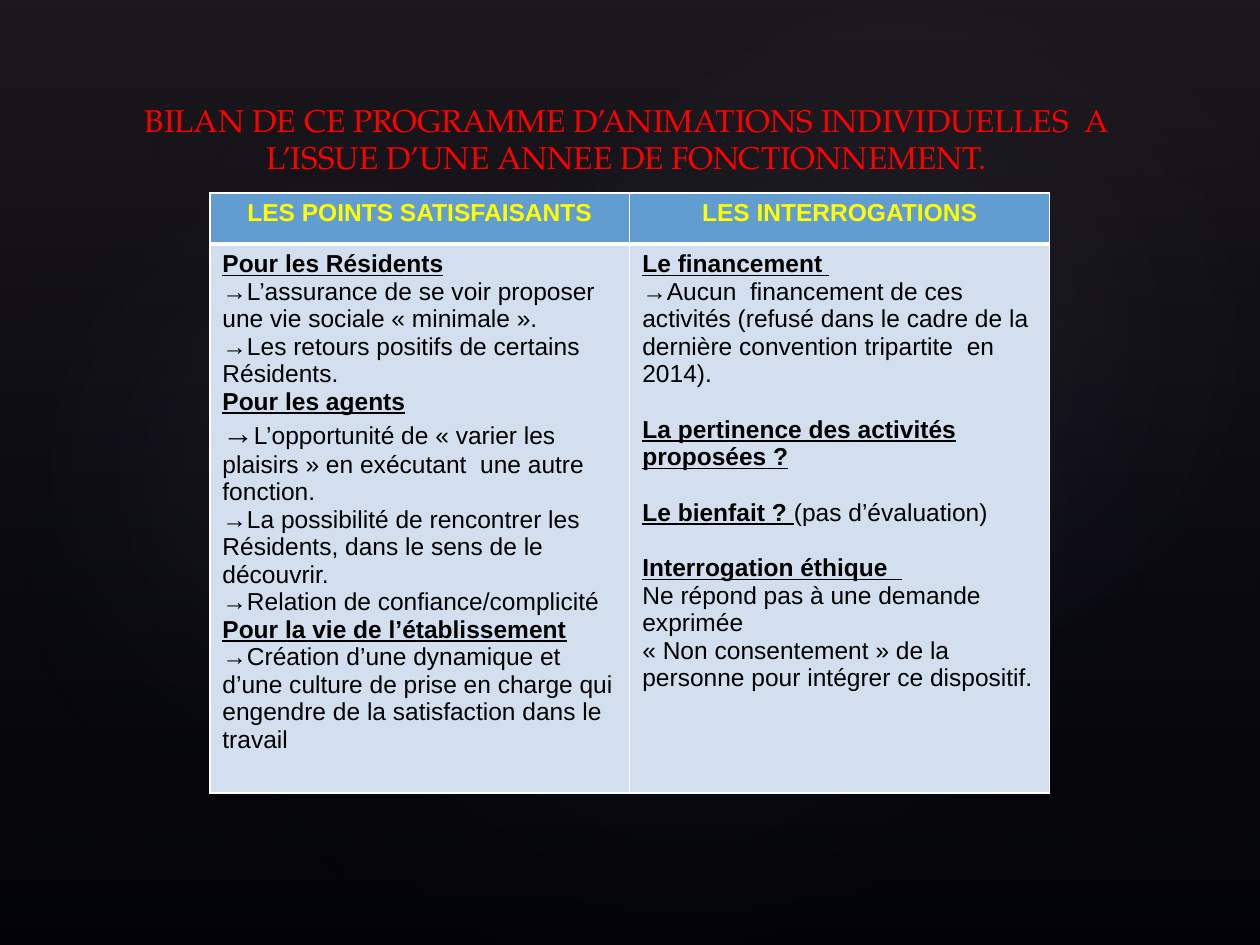
from dataclasses import dataclass

from lxml.etree import SubElement
from pptx import Presentation
from pptx.dml.color import RGBColor
from pptx.enum.shapes import MSO_SHAPE
from pptx.enum.text import MSO_ANCHOR, MSO_AUTO_SIZE, PP_ALIGN
from pptx.oxml import parse_xml
from pptx.oxml.ns import nsdecls, qn
from pptx.util import Cm, Pt


@dataclass(frozen=True)
class Theme:
    background: str = "000000"
    veil_top: str = "504652"
    veil_bottom: str = "242852"
    glow: str = "C4BCC6"
    title: str = "FF0000"
    header_text: str = "FFFF00"
    header_fill: str = "629DD1"
    body_text: str = "000000"
    body_fill: str = "D3DFEE"
    border: str = "FFFFFF"
    title_font: str = "TeX Gyre Pagella"
    table_font: str = "Arial"
    title_size: int = 18
    table_size: int = 14
    line_gap: int = 16


THEME = Theme()
ARROW = "→"
TITLE = ("BILAN DE CE PROGRAMME D’ANIMATIONS INDIVIDUELLES  A "
         "L’ISSUE D’UNE ANNEE DE FONCTIONNEMENT.")
HEADERS = ("LES POINTS SATISFAISANTS", "LES INTERROGATIONS")

# Each paragraph: heading, plain text, and whether a gap comes before it
SATISFACTIONS = [
    ("Pour les Résidents", "", False),
    ("", "→L’assurance de se voir proposer une vie sociale « minimale ».", False),
    ("", "→Les retours positifs de certains Résidents.", False),
    ("Pour les agents", "", False),
    ("", "→L’opportunité de « varier les plaisirs » en exécutant  une autre fonction.", False),
    ("", "→La possibilité de rencontrer les Résidents, dans le sens de le découvrir.", False),
    ("", "→Relation de confiance/complicité", False),
    ("Pour la vie de l’établissement", "", False),
    ("", "→Création d’une dynamique et d’une culture de prise en charge qui "
         "engendre de la satisfaction dans le travail", False),
]
QUESTIONS = [
    ("Le financement ", "", False),
    ("", "→Aucun  financement de ces activités (refusé dans le cadre de la "
         "dernière convention tripartite  en 2014).", False),
    ("La pertinence des activités proposées ?", "", True),
    ("Le bienfait ? ", "(pas d’évaluation)", True),
    ("Interrogation éthique  ", "", True),
    ("", "Ne répond pas à une demande exprimée", False),
    ("", "« Non consentement » de la personne pour intégrer ce dispositif.", False),
]
LARGE_ARROW_BEFORE = "→L’opportunité"

# Left, top, width, height in cm, then rotation and opacity
GLOWS = [
    (3.81, 2.9, 20.12, 15.85, 328.7, 7),
    (-0.76, 3.25, 15.39, 12.45, 294.3, 8),
    (9.09, 0.33, 18.01, 13.21, 328.7, 8),
]


def add_gradient_shape(slide, kind, bounds, stops, direction):
    """Add a borderless shape whose stops are (position, colour, opacity)."""
    shape = slide.shapes.add_shape(kind, *(Cm(length) for length in bounds))
    shape.shadow.inherit = False
    shape.line.fill.background()
    stop_xml = "".join(
        f'<a:gs pos="{position * 1000}"><a:srgbClr val="{colour}">'
        f'<a:alpha val="{opacity * 1000}"/></a:srgbClr></a:gs>'
        for position, colour, opacity in stops)
    gradient = parse_xml(f'<a:gradFill {nsdecls("a")} rotWithShape="1">'
                         f'<a:gsLst>{stop_xml}</a:gsLst>{direction}</a:gradFill>')
    shape._element.spPr.find(qn("a:prstGeom")).addnext(gradient)
    return shape


def add_backdrop(slide):
    slide.background.fill.solid()
    slide.background.fill.fore_color.rgb = RGBColor.from_string(THEME.background)
    add_gradient_shape(slide, MSO_SHAPE.RECTANGLE, (0, 0, 25.4, 19.05),
                       [(0, THEME.veil_top, 36), (100, THEME.veil_bottom, 10)],
                       '<a:lin ang="5400000" scaled="0"/>')
    radial = ('<a:path path="circle"><a:fillToRect l="50000" t="50000" '
              'r="50000" b="50000"/></a:path>')
    for *bounds, rotation, opacity in GLOWS:
        glow = add_gradient_shape(slide, MSO_SHAPE.OVAL, bounds,
                                  [(0, THEME.glow, opacity), (58, THEME.veil_bottom, 0)],
                                  radial)
        glow.rotation = rotation


def format_paragraph(para, font_name, size, colour, bold=False, alignment=PP_ALIGN.LEFT):
    para.alignment = alignment
    para.font.name = font_name
    para.font.size = Pt(size)
    para.font.bold = bold
    para.font.color.rgb = RGBColor.from_string(colour)


def set_title(slide):
    title = slide.shapes.title
    title.left, title.top, title.width, title.height = Cm(2.16), Cm(1.12), Cm(20.96), Cm(2.56)
    frame = title.text_frame
    frame.text = TITLE
    frame.word_wrap = True
    frame.auto_size = MSO_AUTO_SIZE.NONE
    frame.vertical_anchor = MSO_ANCHOR.BOTTOM
    format_paragraph(frame.paragraphs[0], THEME.title_font, THEME.title_size,
                     THEME.title, alignment=PP_ALIGN.CENTER)
    # Bring the title in front of the backdrop
    slide.shapes._spTree.append(title._element)


def style_cell(cell, fill, bottom_width=1):
    properties = cell._tc.get_or_add_tcPr()
    for side in ("lnL", "lnR", "lnT", "lnB"):
        width = bottom_width if side == "lnB" else 1
        line = SubElement(properties, qn(f"a:{side}"), w=str(Pt(width)))
        SubElement(SubElement(line, qn("a:solidFill")), qn("a:srgbClr"), val=THEME.border)
    cell.fill.solid()
    cell.fill.fore_color.rgb = RGBColor.from_string(fill)


def add_span(para, text, heading=False):
    span = para.add_run()
    span.text = text
    span.font.bold = heading
    span.font.underline = heading
    return span


def fill_body(cell, content):
    for index, (heading, text, gap) in enumerate(content):
        frame = cell.text_frame
        para = frame.add_paragraph() if index else frame.paragraphs[0]
        format_paragraph(para, THEME.table_font, THEME.table_size, THEME.body_text)
        if gap:
            para.space_before = Pt(THEME.line_gap)
        if heading:
            add_span(para, heading, heading=True)
        if text.startswith(LARGE_ARROW_BEFORE):
            add_span(para, ARROW).font.size = Pt(THEME.title_size)
            text = text.removeprefix(ARROW)
        if text:
            add_span(para, text)


def add_review_table(slide):
    table = slide.shapes.add_table(2, 2, Cm(4.23), Cm(3.89), Cm(16.93), Cm(12.1)).table
    table.horz_banding = False
    table.rows[0].height, table.rows[1].height = Cm(1.03), Cm(11.07)
    for column, header in enumerate(HEADERS):
        cell = table.cell(0, column)
        cell.text = header
        style_cell(cell, THEME.header_fill, bottom_width=3)
        format_paragraph(cell.text_frame.paragraphs[0], THEME.table_font, THEME.table_size,
                         THEME.header_text, bold=True, alignment=PP_ALIGN.CENTER)
    for column, content in enumerate((SATISFACTIONS, QUESTIONS)):
        cell = table.cell(1, column)
        style_cell(cell, THEME.body_fill)
        # The thick rule under the header is shared with the body row
        cell._tc.tcPr.find(qn("a:lnT")).set("w", str(Pt(3)))
        fill_body(cell, content)


def main():
    deck = Presentation()
    deck.slide_width, deck.slide_height = Cm(25.4), Cm(19.05)
    slide = deck.slides.add_slide(deck.slide_layouts[5])
    add_backdrop(slide)
    set_title(slide)
    add_review_table(slide)
    deck.save("out.pptx")


if __name__ == "__main__":
    main()
